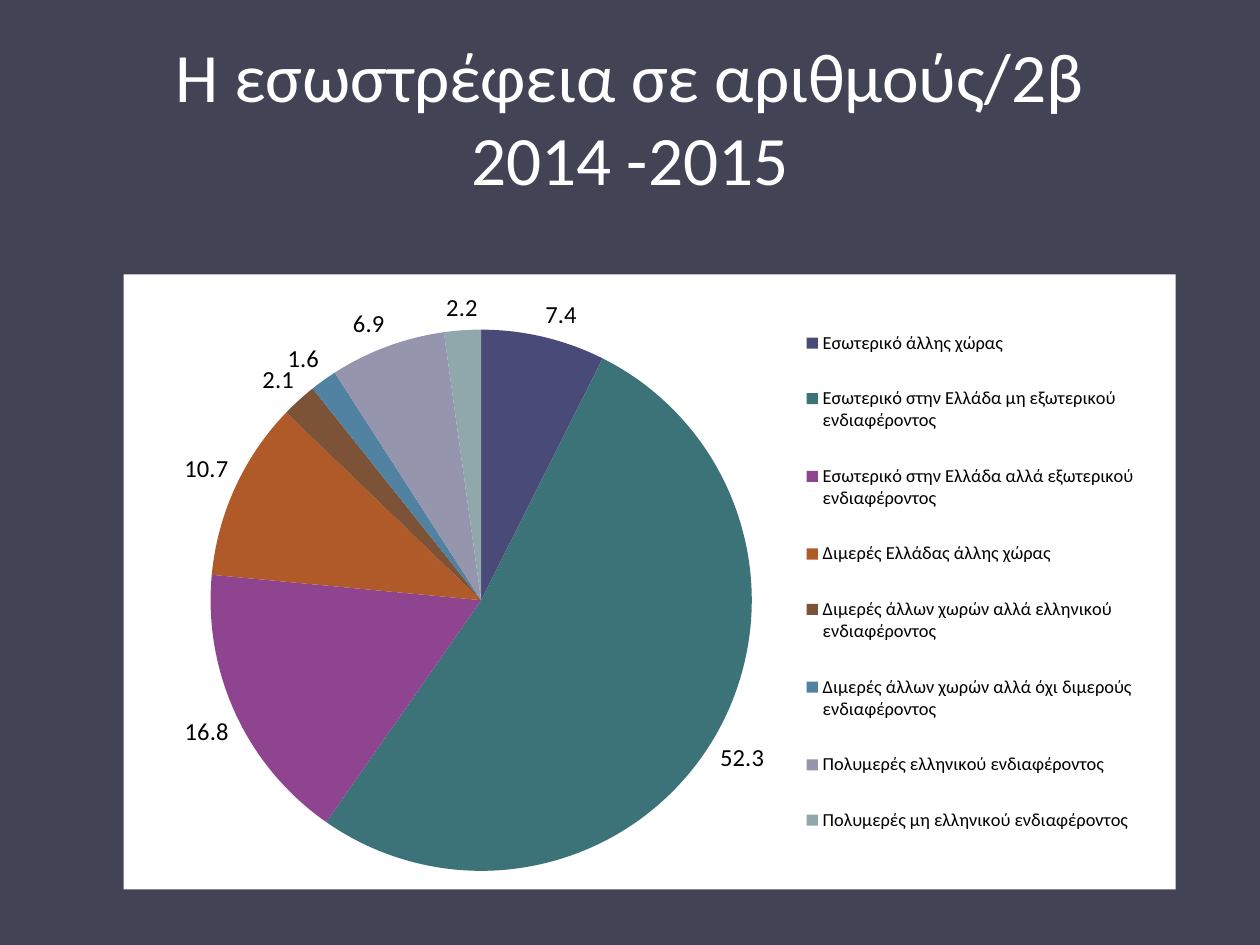
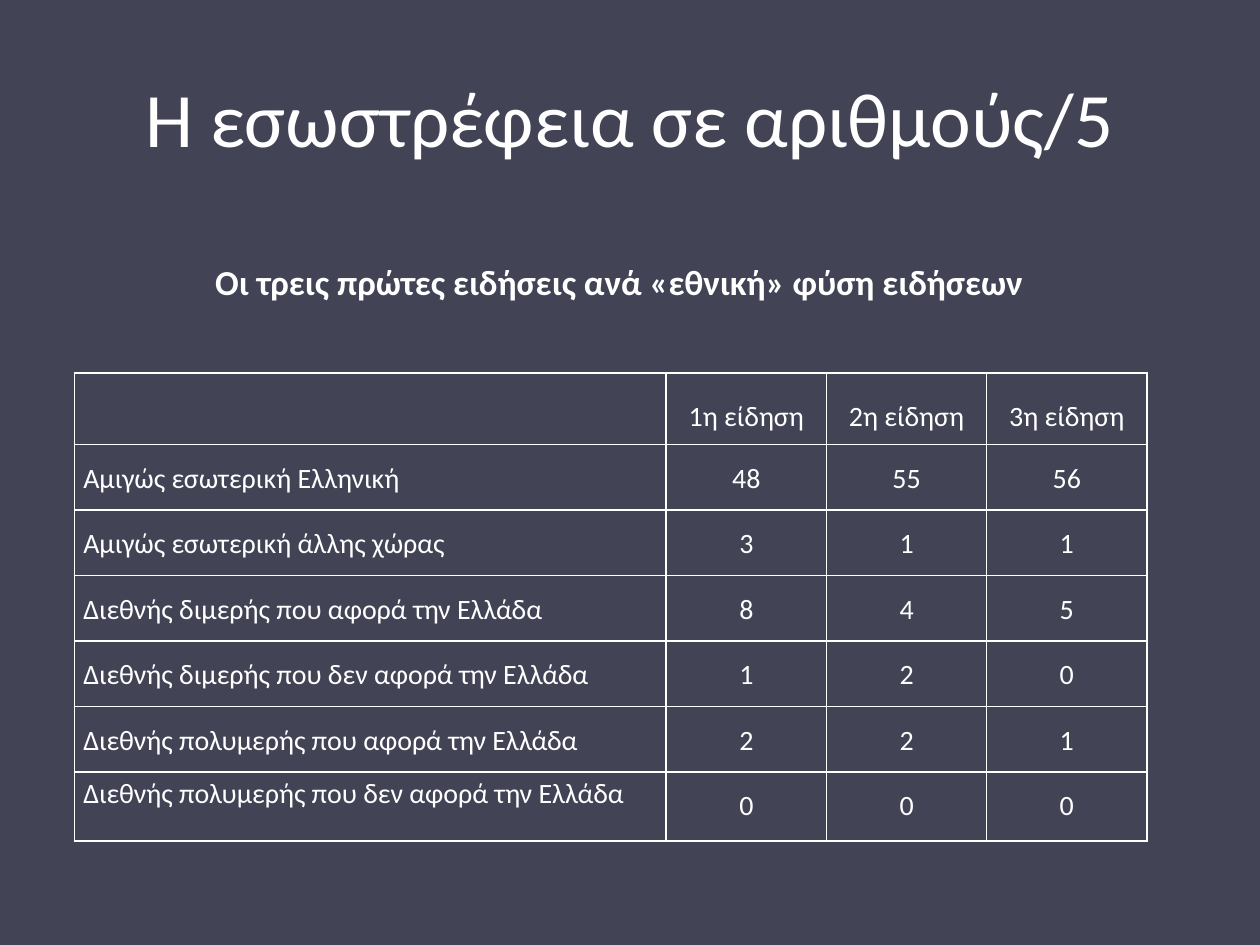
from dataclasses import dataclass

from lxml import etree
from pptx import Presentation
from pptx.chart.data import CategoryChartData
from pptx.dml.color import RGBColor
from pptx.enum.chart import XL_CHART_TYPE, XL_LABEL_POSITION, XL_LEGEND_POSITION
from pptx.enum.text import MSO_ANCHOR, MSO_AUTO_SIZE, PP_ALIGN
from pptx.oxml import parse_xml
from pptx.oxml.ns import nsdecls, qn
from pptx.util import Cm, Pt

PIE = XL_CHART_TYPE.PIE
OUTSIDE_END = XL_LABEL_POSITION.OUTSIDE_END
LEGEND_RIGHT = XL_LEGEND_POSITION.RIGHT
LEFT, CENTER = PP_ALIGN.LEFT, PP_ALIGN.CENTER
TOP, MIDDLE = MSO_ANCHOR.TOP, MSO_ANCHOR.MIDDLE
NO_AUTOFIT = MSO_AUTO_SIZE.NONE
TITLE_ONLY = 5


@dataclass(frozen=True)
class Theme:
    font: str = "Calibri"
    background: str = "424456"
    light: str = "FFFFFF"
    dark: str = "000000"
    slices: tuple = ("4A4A78", "3C7378", "8F4490", "AF5A28",
                     "7C5337", "5282A2", "9595AD", "90A8AC")
    title: float = 44
    long_title: float = 39.6
    subtitle: float = 20
    table: float = 16
    label: float = 14
    legend: float = 10.5
    border: float = 1


THEME = Theme()

NEWS_SHARES = {
    "Εσωτερικό άλλης χώρας": 7.4,
    "Εσωτερικό στην Ελλάδα μη εξωτερικού ενδιαφέροντος": 52.3,
    "Εσωτερικό στην Ελλάδα αλλά εξωτερικού ενδιαφέροντος": 16.8,
    "Διμερές Ελλάδας άλλης χώρας": 10.7,
    "Διμερές άλλων χωρών αλλά ελληνικού ενδιαφέροντος": 2.1,
    "Διμερές άλλων χωρών αλλά όχι διμερούς ενδιαφέροντος": 1.6,
    "Πολυμερές ελληνικού ενδιαφέροντος": 6.9,
    "Πολυμερές μη ελληνικού ενδιαφέροντος": 2.2,
}

TOP_NEWS = [
    ("", "1η είδηση", "2η είδηση", "3η είδηση"),
    ("Αμιγώς εσωτερική Ελληνική", 48, 55, 56),
    ("Αμιγώς εσωτερική άλλης χώρας", 3, 1, 1),
    ("Διεθνής διμερής που αφορά την Ελλάδα", 8, 4, 5),
    ("Διεθνής διμερής που δεν αφορά την Ελλάδα", 1, 2, 0),
    ("Διεθνής πολυμερής που αφορά την Ελλάδα", 2, 2, 1),
    ("Διεθνής πολυμερής που δεν αφορά την Ελλάδα", 0, 0, 0),
]


def style_font(font, size, color, bold=False):
    font.name = THEME.font
    font.size = Pt(size)
    font.bold = bold
    font.color.rgb = RGBColor.from_string(color)


def style_paragraph(para, size, align=LEFT, bold=False):
    para.alignment = align
    for span in para.runs:
        style_font(span.font, size, THEME.light, bold)


def add_page(deck, title, size):
    """Add a page with the shared background and title style."""
    page = deck.slides.add_slide(deck.slide_layouts[TITLE_ONLY])
    page.background.fill.solid()
    page.background.fill.fore_color.rgb = RGBColor.from_string(THEME.background)
    box = page.shapes.title
    box.left, box.top, box.width, box.height = Cm(1.27), Cm(0.76), Cm(22.86), Cm(3.18)
    frame = box.text_frame
    frame.text = title
    frame.word_wrap = True
    frame.auto_size = NO_AUTOFIT
    frame.vertical_anchor = MIDDLE
    style_paragraph(frame.paragraphs[0], size, CENTER)
    return page


def add_subtitle(page, text, left, top, width, height):
    frame = page.shapes.add_textbox(left, top, width, height).text_frame
    frame.word_wrap = True
    frame.text = text
    style_paragraph(frame.paragraphs[0], THEME.subtitle, bold=True)


def set_layout(element, x, y, width, height, inner=False):
    """Place a plot area or legend by fractions of the chart."""
    for old in element.findall(qn("c:layout")):
        element.remove(old)
    layout = parse_xml(f"<c:layout {nsdecls('c')}><c:manualLayout/></c:layout>")
    settings = {"xMode": "edge", "yMode": "edge", "x": x, "y": y, "w": width, "h": height}
    if inner:
        settings = {"layoutTarget": "inner", **settings}
    for name, value in settings.items():
        etree.SubElement(layout[0], qn(f"c:{name}")).set("val", str(value))
    position = element.find(qn("c:legendPos"))
    element.insert(0 if position is None else 1, layout)


def add_pie(page, shares, left, top, width, height):
    data = CategoryChartData(number_format="0.0")
    data.categories = list(shares)
    data.add_series("Series 1", list(shares.values()))
    chart = page.shapes.add_chart(PIE, left, top, width, height, data).chart
    chart.has_title = False
    style_font(chart.font, THEME.legend, THEME.dark)

    # White panel
    panel = parse_xml(
        f"<c:spPr {nsdecls('c', 'a')}><a:solidFill><a:srgbClr val='{THEME.light}'/>"
        "</a:solidFill><a:ln><a:noFill/></a:ln></c:spPr>")
    chart.element.find(qn("c:chart")).addnext(panel)

    # Slices and values
    plot = chart.plots[0]
    plot.vary_by_categories = True
    for index, color in enumerate(THEME.slices):
        fill = plot.series[0].points[index].format.fill
        fill.solid()
        fill.fore_color.rgb = RGBColor.from_string(color)
    plot.has_data_labels = True
    labels = plot.data_labels
    labels.show_value = True
    labels.position = OUTSIDE_END
    labels.number_format = "0.0"
    labels.number_format_is_linked = False
    style_font(labels.font, THEME.label, THEME.dark)

    # Legend
    chart.has_legend = True
    chart.legend.position = LEGEND_RIGHT
    chart.legend.include_in_layout = False
    style_font(chart.legend.font, THEME.legend, THEME.dark)
    set_layout(chart.element.find(".//" + qn("c:plotArea")), 0.08, 0.09, 0.52, 0.88, inner=True)
    set_layout(chart.element.find(".//" + qn("c:legend")), 0.64, 0.04, 0.33, 0.92)


def add_borders(cell):
    properties = cell._tc.get_or_add_tcPr()
    for index, side in enumerate(("lnL", "lnR", "lnT", "lnB")):
        properties.insert(index, parse_xml(
            f"<a:{side} {nsdecls('a')} w='{Pt(THEME.border)}'><a:solidFill>"
            f"<a:srgbClr val='{THEME.light}'/></a:solidFill></a:{side}>"))


def fill_cell(cell, text, align, anchor, spacing):
    cell.margin_left = cell.margin_right = Cm(0.18)
    cell.margin_top = cell.margin_bottom = 0
    cell.vertical_anchor = anchor
    cell.text = text
    para = cell.text_frame.paragraphs[0]
    para.line_spacing = spacing
    style_paragraph(para, THEME.table, align)
    cell.fill.background()
    add_borders(cell)


def add_news_table(page, rows, left, top, column_widths, row_heights):
    table = page.shapes.add_table(len(rows), len(column_widths), left, top,
                                  sum(column_widths), sum(row_heights)).table
    table.first_row = table.horz_banding = False
    for column, width in zip(table.columns, column_widths):
        column.width = width
    for row, height in zip(table.rows, row_heights):
        row.height = height
    last = len(rows) - 1
    for r, values in enumerate(rows):
        for c, value in enumerate(values):
            fill_cell(table.cell(r, c), str(value),
                      align=CENTER if c else LEFT,
                      anchor=TOP if r else MIDDLE,
                      spacing=1.15 if (r, c) == (last, 0) else 1.5)


def main():
    deck = Presentation()
    deck.slide_width, deck.slide_height = Cm(25.4), Cm(19.05)

    # Shares of news by national character
    page = add_page(deck, "Η εσωστρέφεια σε αριθμούς/2β\v2014 -2015", THEME.long_title)
    add_pie(page, NEWS_SHARES, Cm(2.49), Cm(5.53), Cm(21.21), Cm(12.4))

    # First three news items
    page = add_page(deck, "Η εσωστρέφεια σε αριθμούς/5", THEME.title)
    add_subtitle(page, "Οι τρεις πρώτες ειδήσεις ανά «εθνική» φύση ειδήσεων",
                 Cm(4.09), Cm(5.13), Cm(17.4), Cm(1.96))
    add_news_table(page, TOP_NEWS, Cm(1.5), Cm(7.52),
                   column_widths=[Cm(11.93)] + [Cm(3.23)] * 3,
                   row_heights=[Cm(1.44)] + [Cm(1.32)] * 5 + [Cm(1.39)])

    deck.save("out.pptx")


if __name__ == "__main__":
    main()
